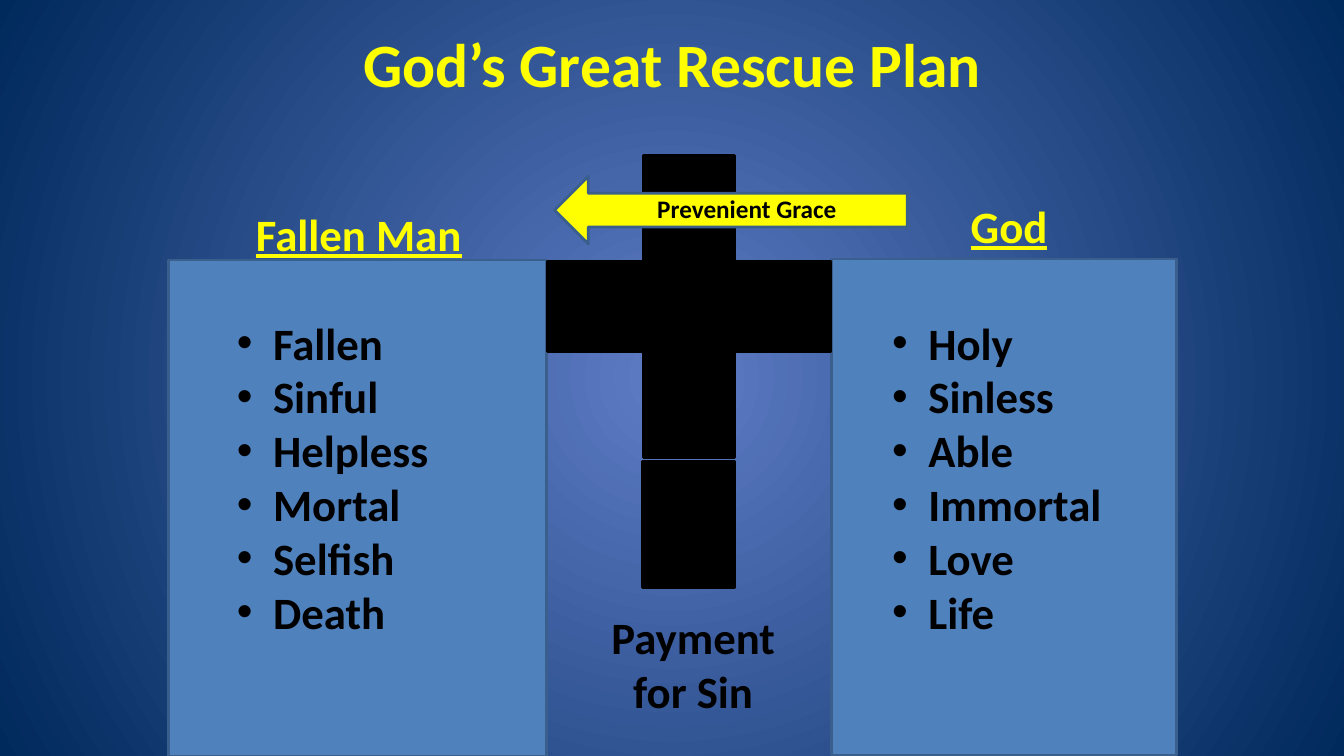
from lxml import etree
from pptx import Presentation
from pptx.dml.color import RGBColor
from pptx.enum.shapes import MSO_SHAPE
from pptx.enum.text import MSO_ANCHOR, PP_ALIGN
from pptx.oxml.ns import qn
from pptx.util import Inches, Pt

RECT, PLUS, ARROW = MSO_SHAPE.RECTANGLE, MSO_SHAPE.MATH_PLUS, MSO_SHAPE.LEFT_ARROW
LEFT, CENTER = PP_ALIGN.LEFT, PP_ALIGN.CENTER
TOP, MIDDLE = MSO_ANCHOR.TOP, MSO_ANCHOR.MIDDLE


class Theme:
    font = "Calibri"
    black, yellow = "000000", "FFFF00"
    panel, edge = "4F81BD", "3A5F8C"
    glow, night = "5E7CC5", "00295C"
    title, body, label = 44, 32, 18
    line = 2
    indent = 0.36


class Board:
    def __init__(self, slide, theme):
        self.slide = slide
        self.theme = theme

    def backdrop(self):
        """Radial gradient from the centre of the slide."""
        fill = self.slide.background.fill
        fill.gradient()
        for stop, color in zip(fill.gradient_stops, (self.theme.glow, self.theme.night)):
            stop.color.rgb = RGBColor.from_string(color)
        grad = self.slide.element.find(".//" + qn("a:gradFill"))
        grad.remove(grad.find(qn("a:lin")))
        radial = etree.Element(qn("a:path"), path="circle")
        etree.SubElement(radial, qn("a:fillToRect"), l="50000", t="50000", r="50000", b="50000")
        grad.find(qn("a:gsLst")).addnext(radial)

    def shape(self, kind, box, fill, line):
        item = self.slide.shapes.add_shape(kind, *map(Inches, box))
        item.shadow.inherit = False
        item.fill.solid()
        item.fill.fore_color.rgb = RGBColor.from_string(fill)
        item.line.color.rgb = RGBColor.from_string(line)
        item.line.width = Pt(self.theme.line)

    def text(self, words, box, size, color, align=LEFT, anchor=TOP, under=None, wrap=True):
        item = self.slide.shapes.add_textbox(*map(Inches, box))
        frame = item.text_frame
        frame.word_wrap = wrap
        frame.vertical_anchor = anchor
        frame.text = words
        for para in frame.paragraphs:
            para.alignment = align
            for run in para.runs:
                font = run.font
                font.name, font.size, font.bold = self.theme.font, Pt(size), True
                font.underline = under
                font.color.rgb = RGBColor.from_string(color)
        return item

    def bullets(self, words, box):
        item = self.text("\n".join(words), box, self.theme.body, self.theme.black)
        indent = Inches(self.theme.indent)
        for para in item.text_frame.paragraphs:
            props = para._p.get_or_add_pPr()
            props.set("marL", str(indent))
            props.set("indent", str(-indent))
            etree.SubElement(props, qn("a:buFont"), typeface="Arial")
            etree.SubElement(props, qn("a:buChar"), char="•")


def main():
    deck = Presentation()
    deck.slide_width, deck.slide_height = Inches(13.33), Inches(7.5)
    theme = Theme()
    board = Board(deck.slides.add_slide(deck.slide_layouts[6]), theme)
    board.backdrop()

    # Two cliffs and the cross between them
    board.shape(RECT, (1.67, 2.58, 3.75, 4.92), theme.panel, theme.edge)
    board.shape(RECT, (8.25, 2.57, 3.42, 4.92), theme.panel, theme.edge)
    board.shape(PLUS, (4.92, 1, 3.83, 4.08), theme.black, theme.black)
    board.shape(RECT, (6.37, 4.58, 0.92, 1.25), theme.black, theme.black)

    # Title and headings
    board.text("God’s Great Rescue Plan", (2.17, 0, 9, 1.25), theme.title, theme.yellow,
               CENTER, MIDDLE)
    board.text("Fallen Man", (2.44, 2, 2.39, 0.64), theme.body, theme.yellow, under=True)
    board.text("God", (9.53, 1.92, 0.97, 0.64), theme.body, theme.yellow, under=True, wrap=False)

    # Traits on each side
    board.bullets(("Fallen", "Sinful", "Helpless", "Mortal", "Selfish", "Death"),
                  (2.25, 3.08, 2.75, 3.33))
    board.bullets(("Holy", "Sinless", "Able", "Immortal", "Love", "Life"),
                  (8.75, 3.08, 2.5, 3.33))

    # Grace arrow
    board.shape(ARROW, (5.5, 1.75, 3.5, 0.67), theme.yellow, theme.edge)
    board.text("Prevenient Grace", (6.42, 1.87, 3, 0.4), theme.label, theme.black)

    # Caption under the cross
    board.text("Payment for Sin", (5.75, 6, 2.25, 1.18), theme.body, theme.black, CENTER)

    deck.save("out.pptx")


if __name__ == "__main__":
    main()
